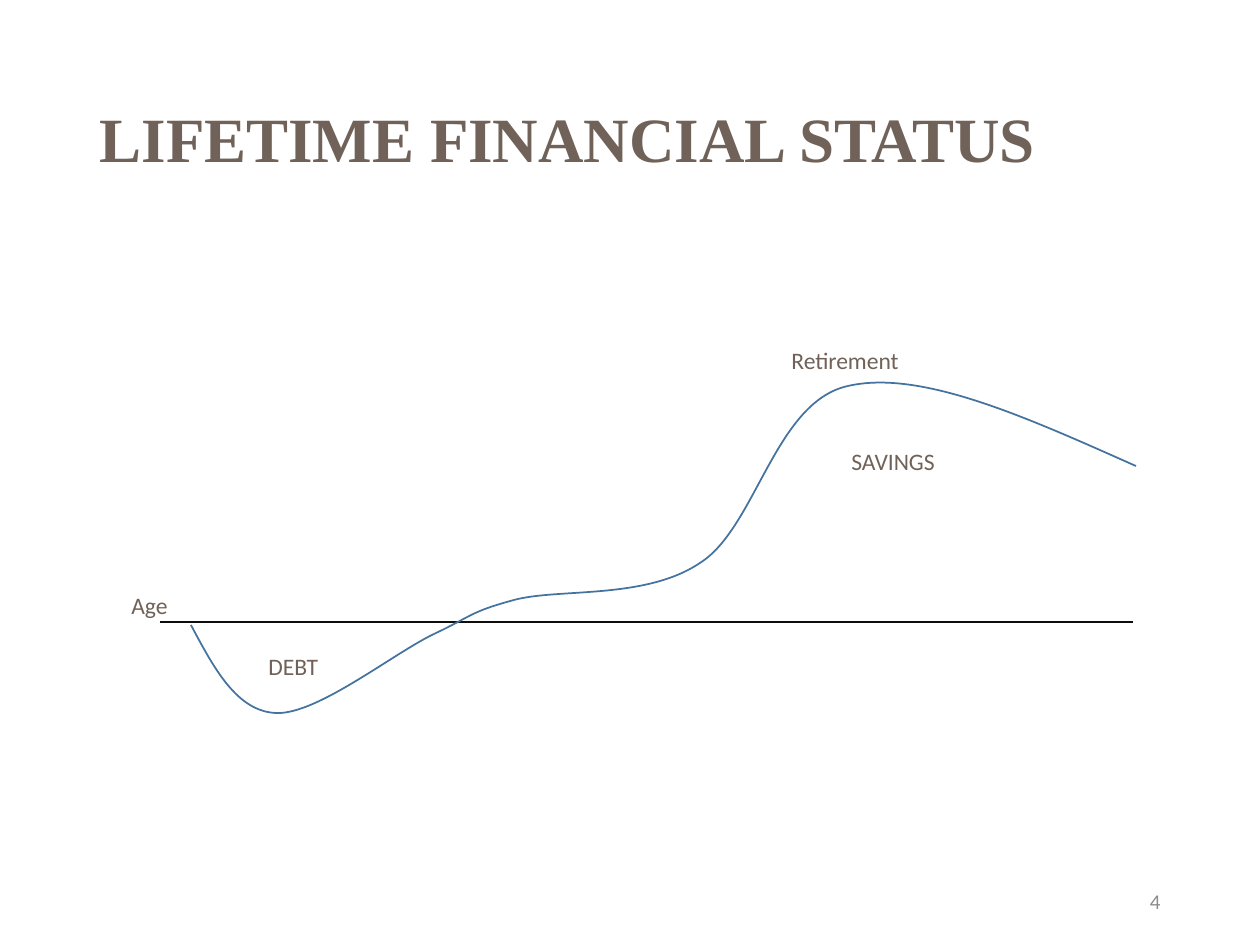
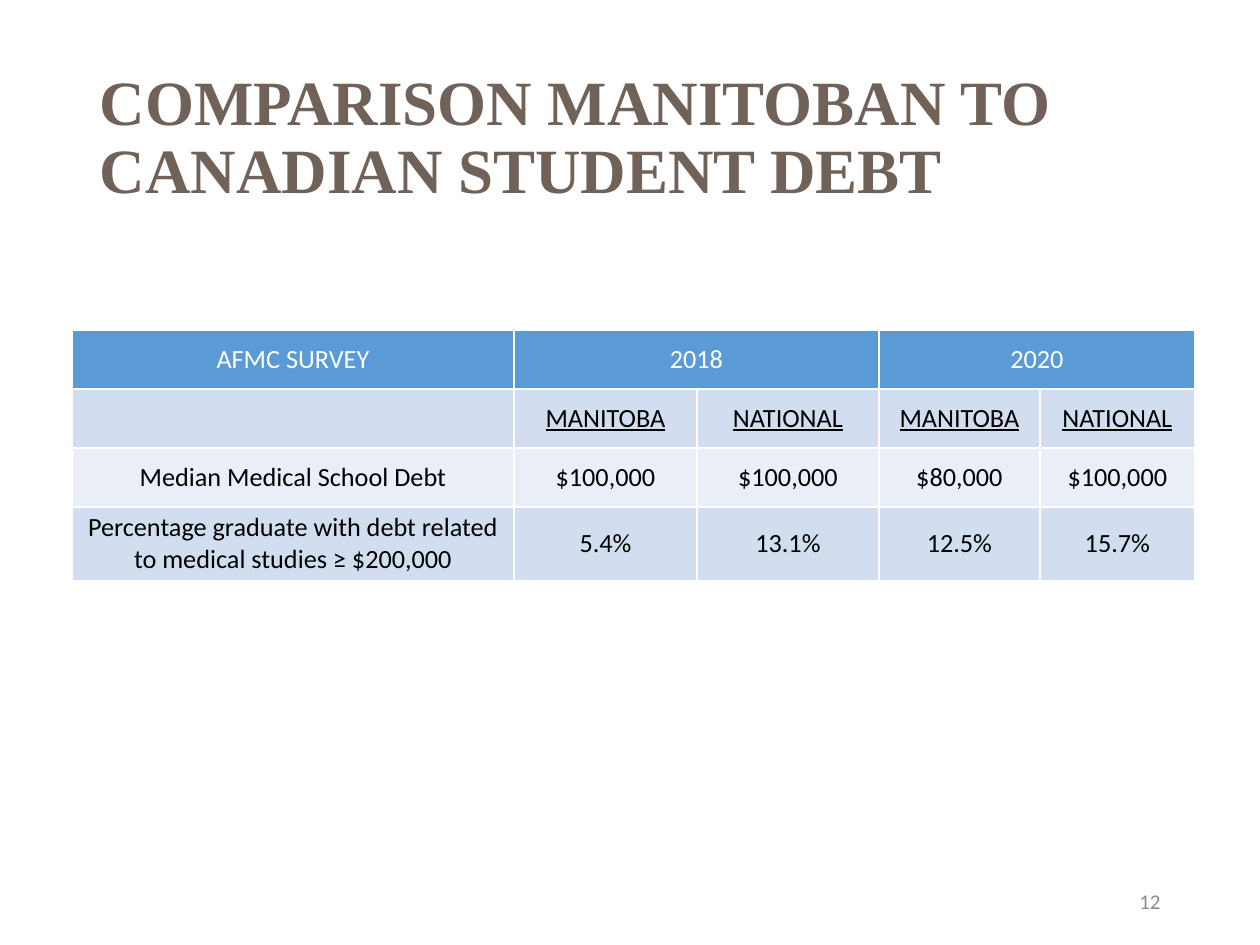
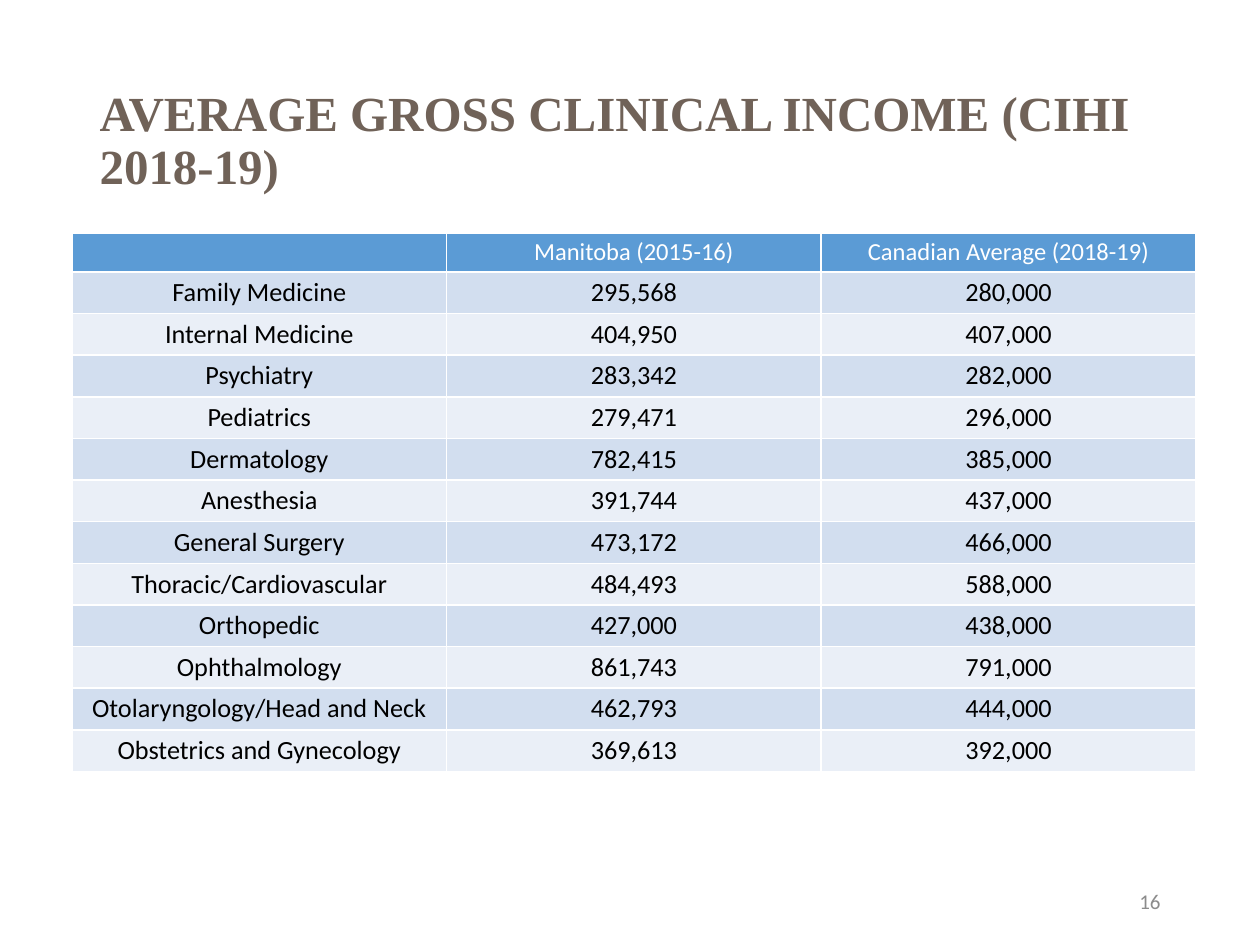
import lxml.etree
import pptx
import pptx.dml.color
import pptx.enum.shapes
import pptx.enum.text
import pptx.oxml.ns
import pptx.util

EMU_PER_PX = 914400 / 126
ALIGN = pptx.enum.text.PP_ALIGN
MIDDLE = pptx.enum.text.MSO_ANCHOR.MIDDLE
qn = pptx.oxml.ns.qn

TAUPE, GREY, BLACK, WHITE = "706258", "8C8C8C", "000000", "FFFFFF"
AXIS, CURVE = "0D0D0D", "43739E"
HEADER, BANDS = "5B9BD5", ("D2DEEF", "EAEFF7")
TITLE_FONT, BODY_FONT = "Times New Roman", "Calibri"

TITLE_BOX = (87, 51, 1109, 183)
NUMBER_BOX = (889, 876, 284, 50)
DIAGRAM_BOX = (118, 339, 1019, 375)

CURVE_TOP, CURVE_HEIGHT = 43, 331
CURVE_START = (73, 286)
CURVE_SEGMENTS = [  # two control points and an end point each
    ((96, 329), (119, 373), (159, 374)),
    ((200, 375), (276, 314), (316, 295)),
    ((356, 276), (352, 273), (396, 261)),
    ((440, 249), (527, 261), (582, 224)),
    ((638, 189), (657, 63), (730, 47)),
    ((803, 30), (910, 79), (1018, 127)),
]
LIFE_STAGES = [
    ("DEBT", 138, 307, 77),
    ("SAVINGS", 721, 102, 112),
    ("Age", 1, 246, 76),
    ("Retirement", 661, 1, 135),
]
DEBT_ROWS = [
    ("AFMC SURVEY", "2018", "", "2020", ""),
    ("", "MANITOBA", "NATIONAL", "MANITOBA", "NATIONAL"),
    ("Median Medical School Debt", "$100,000", "$100,000", "$80,000", "$100,000"),
    ("Percentage graduate with debt related to medical studies ≥ $200,000",
     "5.4%", "13.1%", "12.5%", "15.7%"),
]
INCOME_ROWS = [
    ("", "Manitoba (2015-16)", "Canadian Average (2018-19)"),
    ("Family Medicine", "295,568", "280,000"),
    ("Internal Medicine", "404,950", "407,000"),
    ("Psychiatry", "283,342", "282,000"),
    ("Pediatrics", "279,471", "296,000"),
    ("Dermatology", "782,415", "385,000"),
    ("Anesthesia", "391,744", "437,000"),
    ("General Surgery", "473,172", "466,000"),
    ("Thoracic/Cardiovascular", "484,493", "588,000"),
    ("Orthopedic", "427,000", "438,000"),
    ("Ophthalmology", "861,743", "791,000"),
    ("Otolaryngology/Head and Neck", "462,793", "444,000"),
    ("Obstetrics and Gynecology", "369,613", "392,000"),
]


def px(length):
    return pptx.util.Emu(round(length * EMU_PER_PX))


def rgb(hex_color):
    return pptx.dml.color.RGBColor.from_string(hex_color)


def write(frame, text, size, color=TAUPE, font=BODY_FONT, bold=False,
          underline=False, align=ALIGN.LEFT, spacing=None):
    paragraph = frame.paragraphs[0]
    paragraph.alignment = align
    paragraph.line_spacing = spacing
    if not text:  # an empty cell still takes its height from the end mark
        lxml.etree.SubElement(paragraph._p, qn("a:endParaRPr"), sz=str(size * 100))
        return
    run = paragraph.add_run()
    run.text = text
    run.font.size = pptx.util.Pt(size)
    run.font.name = font
    run.font.bold = bold
    run.font.underline = underline
    run.font.color.rgb = rgb(color)


def add_label(slide, box, text, size, **style):
    frame = slide.shapes.add_textbox(*map(px, box)).text_frame
    frame.word_wrap = True
    write(frame, text, size, **style)
    return frame


def add_titled_slide(deck, heading, number, size=36, title_box=TITLE_BOX):
    slide = deck.slides.add_slide(deck.slide_layouts[5])
    title = slide.shapes.title
    title.left, title.top, title.width, title.height = map(px, title_box)
    title.text_frame.auto_size = pptx.enum.text.MSO_AUTO_SIZE.NONE
    title.text_frame.vertical_anchor = MIDDLE
    write(title.text_frame, heading, size, font=TITLE_FONT, bold=True, spacing=0.9)
    page = add_label(slide, NUMBER_BOX, str(number), 12, color=GREY, align=ALIGN.RIGHT)
    page.vertical_anchor = MIDDLE
    return slide


def add_wealth_curve(slide, left, top):
    ends = [(px(left + x), px(top + y)) for *_, (x, y) in CURVE_SEGMENTS]
    builder = slide.shapes.build_freeform(px(left + CURVE_START[0]),
                                          px(top + CURVE_START[1]), scale=1.0)
    builder.add_line_segments(ends, close=False)
    wealth = builder.convert_to_shape()
    wealth.shadow.inherit = False
    wealth.fill.background()
    wealth.line.color.rgb = rgb(CURVE)
    wealth.line.width = pptx.util.Pt(1)

    # Bend the straight segments, in a frame that reaches the crest of the curve.
    wealth.top, wealth.height = px(top + CURVE_TOP), px(CURVE_HEIGHT)
    outline = next(wealth._element.iter(qn("a:path")))
    outline.set("h", str(px(CURVE_HEIGHT)))
    start = outline.find(qn("a:moveTo")).find(qn("a:pt"))
    start.set("y", str(px(CURVE_START[1] - CURVE_TOP)))
    for straight, segment in zip(outline.findall(qn("a:lnTo")), CURVE_SEGMENTS):
        bend = lxml.etree.Element(qn("a:cubicBezTo"))
        for x, y in segment:
            lxml.etree.SubElement(bend, qn("a:pt"), x=str(px(x - CURVE_START[0])),
                                  y=str(px(y - CURVE_TOP)))
        outline.replace(straight, bend)


def add_lifetime_diagram(slide, box):
    left, top, width, height = box
    axis_y = px(top + 283)
    axis = slide.shapes.add_connector(pptx.enum.shapes.MSO_CONNECTOR.STRAIGHT,
                                      px(left + 42), axis_y, px(left + width - 4), axis_y)
    axis.line.color.rgb = rgb(AXIS)
    axis.line.width = pptx.util.Pt(1.5)
    lxml.etree.SubElement(axis._element.spPr, qn("a:effectLst"))

    add_wealth_curve(slide, left, top)
    for stage, x, y, label_width in LIFE_STAGES:
        add_label(slide, (left + x, top + y, label_width, 42), stage, 13.5)


def add_borders(cell, color=WHITE, points=1):
    properties = cell._tc.get_or_add_tcPr()
    for side in ("a:lnL", "a:lnR", "a:lnT", "a:lnB"):
        edge = lxml.etree.SubElement(properties, qn(side), w=str(points * 12700))
        fill = lxml.etree.SubElement(edge, qn("a:solidFill"))
        lxml.etree.SubElement(fill, qn("a:srgbClr"), val=color)


def add_banded_table(slide, corner, rows, widths, heights, header_size=15,
                     underlined_row=None):
    box = (*corner, sum(widths), sum(heights))
    table = slide.shapes.add_table(len(rows), len(widths), *map(px, box)).table
    table.horz_banding = False
    for column, width in zip(table.columns, widths):
        column.width = px(width)
    for r, (values, height) in enumerate(zip(rows, heights)):
        table.rows[r].height = px(height)
        for c, value in enumerate(values):
            cell = table.cell(r, c)
            cell.margin_left = cell.margin_right = px(9)
            cell.margin_top = cell.margin_bottom = px(4)
            cell.vertical_anchor = MIDDLE
            add_borders(cell)
            cell.fill.solid()
            cell.fill.fore_color.rgb = rgb(BANDS[(r - 1) % 2] if r else HEADER)
            write(cell.text_frame, value, 15 if r else header_size,
                  color=BLACK if r else WHITE, underline=r == underlined_row,
                  align=ALIGN.CENTER)
    return table


def main():
    deck = pptx.Presentation()
    deck.slide_width, deck.slide_height = px(1260), px(945)

    lifetime = add_titled_slide(deck, "LIFETIME FINANCIAL STATUS", 4)
    add_lifetime_diagram(lifetime, DIAGRAM_BOX)

    debt = add_titled_slide(deck, "COMPARISON MANITOBAN TO CANADIAN STUDENT DEBT", 12,
                            title_box=(87, 48, 1109, 183))
    debt_table = add_banded_table(debt, (72, 330), DEBT_ROWS, (442, 183, 182, 161, 155),
                                  (59, 59, 59, 74), underlined_row=1)
    for first in (1, 3):
        debt_table.cell(0, first).merge(debt_table.cell(0, first + 1))

    income = add_titled_slide(deck, "AVERAGE GROSS CLINICAL INCOME (CIHI 2018-19)", 16,
                              size=28)
    specialties = len(INCOME_ROWS) - 1
    add_banded_table(income, (72, 233), INCOME_ROWS, [1124 / 3] * 3,
                     [39] + [500 / specialties] * specialties, header_size=14)

    deck.save("out.pptx")


if __name__ == "__main__":
    main()
